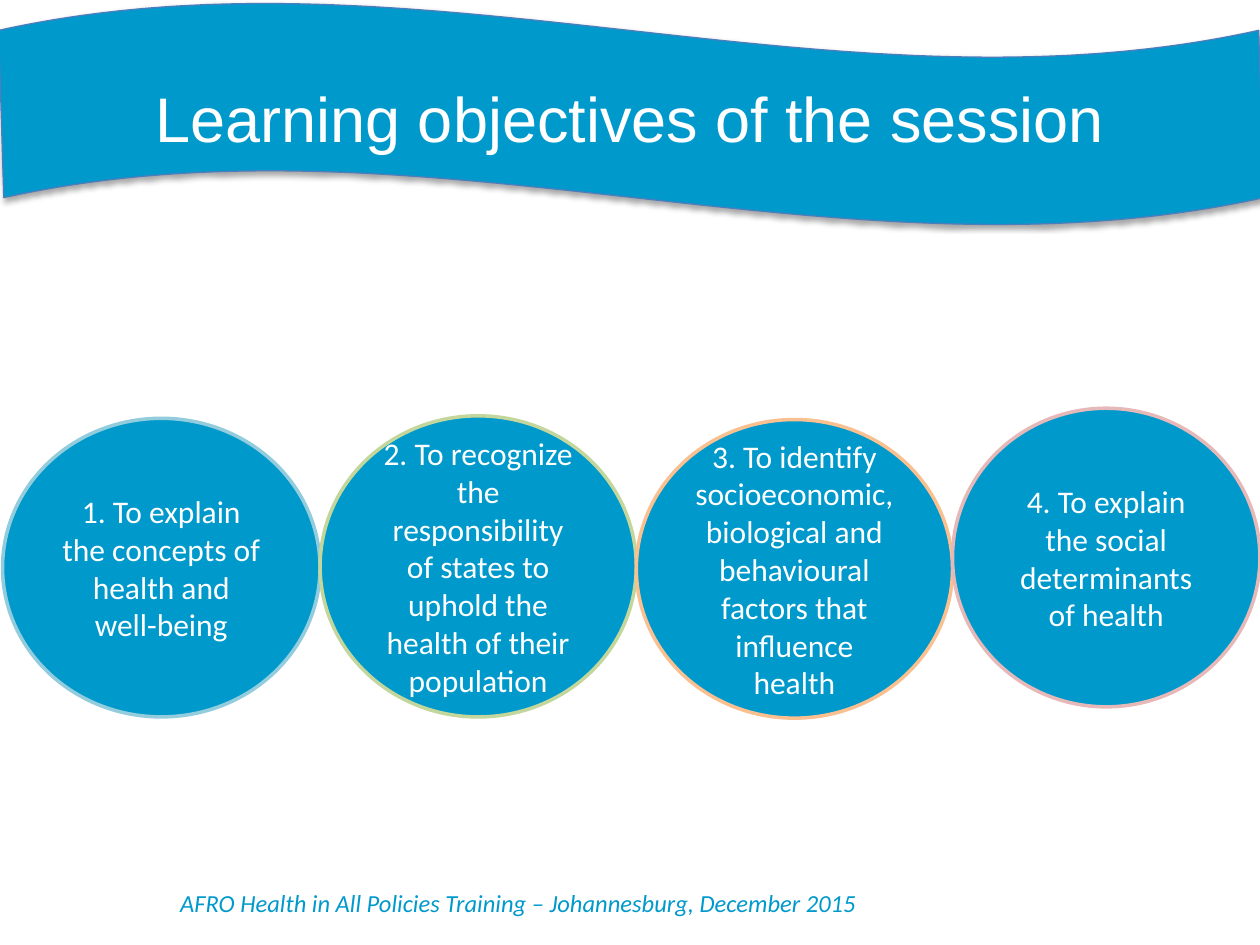
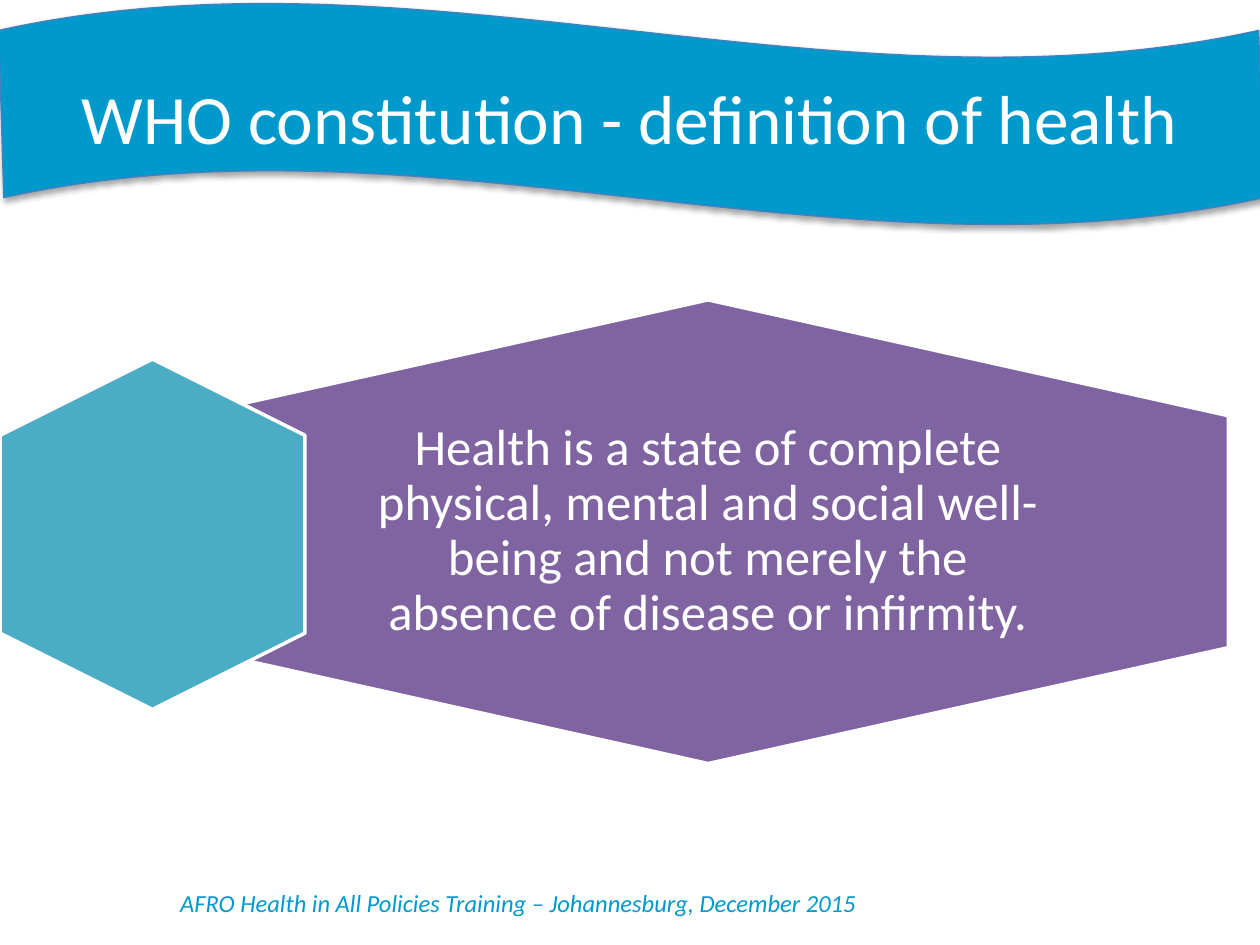
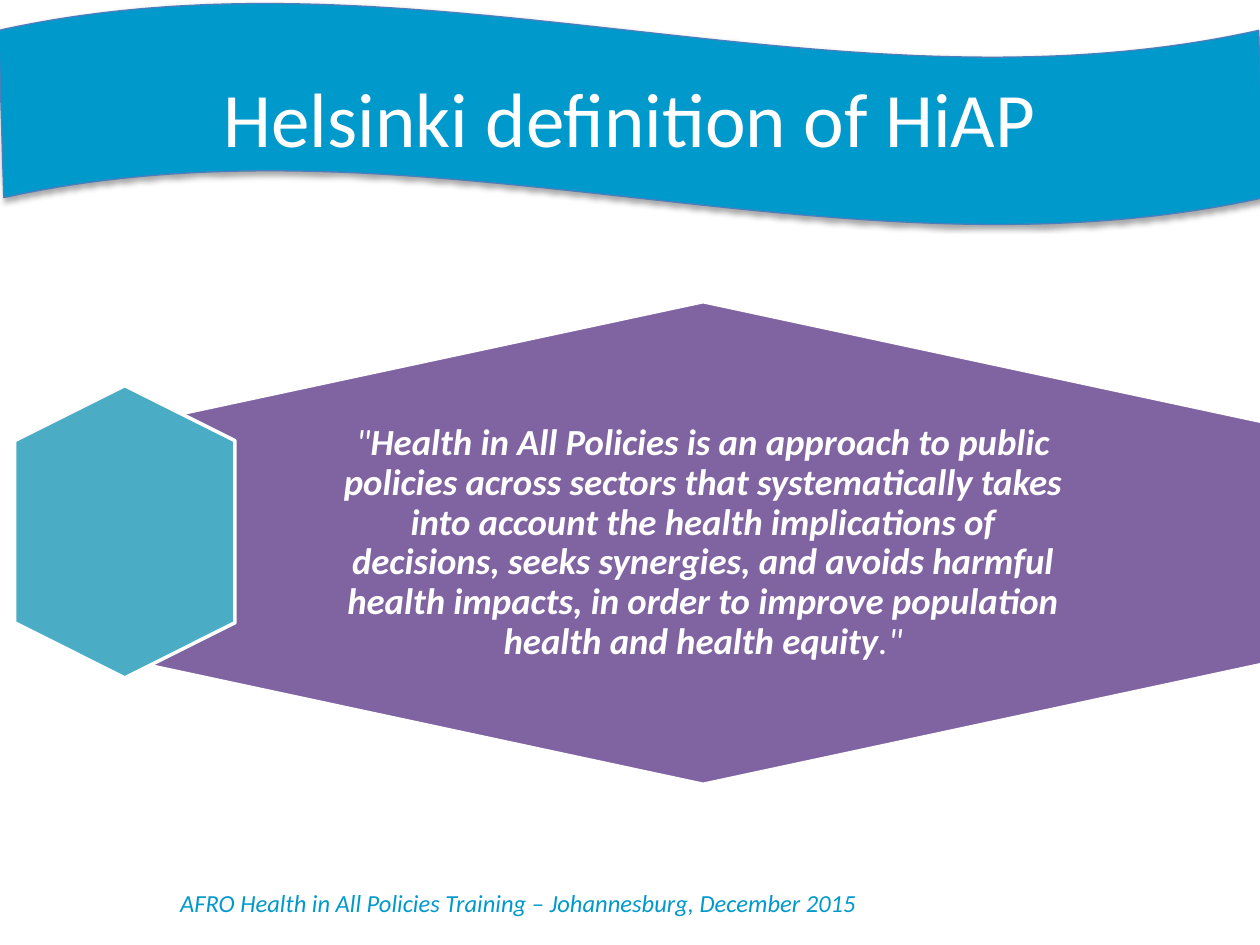
"""Builds three slides on health definitions under a shared wave banner."""
from dataclasses import dataclass

from lxml import etree
from pptx import Presentation
from pptx import util as u
from pptx.dml.color import RGBColor
from pptx.enum import shapes, text
from pptx.oxml.ns import qn


@dataclass(frozen=True)
class Theme:
    blue: str = "0099CC"
    edge: str = "4B7EBC"
    white: str = "FFFFFF"
    plum: str = "8064A2"
    teal: str = "4BACC6"
    black: str = "000000"
    rings: tuple = ("93CDDD", "C3D69B", "FAC090", "E6B9B8")
    body: str = "Calibri"
    head: str = "Arial"
    foot: float = 14
    note: float = 18
    quote: float = 21
    state: float = 29
    small: float = 36
    mid: float = 39.6
    large: float = 44


FOOTER = "AFRO Health in All Policies Training – Johannesburg, December 2015"
GOALS = (
    (3.32, 2.52, 2.37, "1. To explain the concepts of health and well-being"),
    (3.30, 2.51, 2.39, "2. To recognize the responsibility of states to uphold "
                       "the health of their population"),
    (3.33, 2.51, 2.37, "3. To identify socioeconomic, biological and behavioural "
                       "factors that influence health"),
    (3.24, 2.44, 2.37, "4. To explain the social determinants of health"),
)
STATE = ("Health is a state of complete physical, mental and social well-being "
         "and not merely the absence of disease or infirmity.")
POLICY = ("Health in All Policies is an approach to public policies across sectors "
          "that systematically takes into account the health implications of "
          "decisions, seeks synergies, and avoids harmful health impacts, in order "
          "to improve population health and health equity")


class Deck:
    def __init__(self, theme):
        self.theme = theme
        self.show = Presentation()
        self.show.slide_width = u.Inches(10)
        self.show.slide_height = u.Inches(7.5)
        self.slide = None

    def page(self):
        self.slide = self.show.slides.add_slide(self.show.slide_layouts[6])
        look = self.theme
        self.label((0.08, 7, 8.07, 0.34), [(FOOTER, False)], look.foot,
                   color=look.blue, slant=True)
        wave = self.shape(shapes.MSO_SHAPE.WAVE, (-0.01, 0.02, 10.04, 1.77),
                          look.blue, look.edge, 0.75)
        wave.adjustments[0] = 0.125
        wave.adjustments[1] = 0.002
        self.shade(wave)

    def shape(self, kind, box, fill, line, width=2):
        item = self.slide.shapes.add_shape(kind, *map(u.Inches, box))
        item.shadow.inherit = False
        item.fill.solid()
        item.fill.fore_color.rgb = RGBColor.from_string(fill)
        item.line.color.rgb = RGBColor.from_string(line)
        item.line.width = u.Pt(width)
        return item

    def shade(self, item):
        effects = item._element.spPr.find(qn("a:effectLst"))
        outer = etree.SubElement(effects, qn("a:outerShdw"), blurRad=str(u.Pt(3.1)),
                                 dist=str(u.Pt(1.8)), dir="5400000", rotWithShape="0")
        tint = etree.SubElement(outer, qn("a:srgbClr"), val=self.theme.black)
        etree.SubElement(tint, qn("a:alpha"), val="35000")

    def put(self, frame, runs, size, color=None, face=None, slant=False, pitch=None):
        frame.word_wrap = True
        para = frame.paragraphs[0]
        para.alignment = text.PP_ALIGN.CENTER
        if pitch:
            para.line_spacing = pitch
        for words, bold in runs:
            run = para.add_run()
            run.text = words
            font = run.font
            font.name = face or self.theme.body
            font.size = u.Pt(size)
            font.bold = bold
            font.italic = slant
            font.color.rgb = RGBColor.from_string(color or self.theme.white)

    def label(self, box, runs, size, middle=False, inset=None, **style):
        frame = self.slide.shapes.add_textbox(*map(u.Inches, box)).text_frame
        if middle:
            frame.vertical_anchor = text.MSO_ANCHOR.MIDDLE
        if inset:
            frame.margin_left = frame.margin_right = u.Inches(inset)
            frame.margin_top = frame.margin_bottom = u.Inches(inset)
        self.put(frame, runs, size, **style)

    def title(self, words, size):
        self.label((0.5, 0.3, 9, 1.25), [(words, False)], size, middle=True)

    def disc(self, box, ring, words):
        item = self.shape(shapes.MSO_SHAPE.OVAL, box, self.theme.blue, ring)
        item.text_frame.vertical_anchor = text.MSO_ANCHOR.MIDDLE
        self.put(item.text_frame, [(words, False)], self.theme.note)

    def hexa(self, mid, wide, high, fill):
        x, y = mid
        item = self.shape(shapes.MSO_SHAPE.HEXAGON,
                          (x - high / 2, y - wide / 2, high, wide),
                          fill, self.theme.white)
        item.rotation = 90

    def panel(self, mid, size, area, runs, points, inset, slant=False):
        self.hexa(mid, *size, self.theme.plum)
        x, y = mid
        wide, high = area
        self.label((x - wide / 2, y - high / 2, wide, high), runs, points,
                   middle=True, inset=inset, slant=slant, pitch=0.9)


def main():
    look = Theme()
    deck = Deck(look)

    deck.page()
    deck.label((0, 0.58, 10, 0.71), [("Learning objectives of the session", False)],
               look.small, face=look.head)
    left = 0.02
    for ring, (top, wide, high, words) in zip(look.rings, GOALS):
        deck.disc((left, top, wide, high), ring, words)
        left += wide

    deck.page()
    deck.title("WHO constitution - definition of health", look.mid)
    deck.panel((5.62, 4.22), (8.26, 3.68), (5.51, 2.46), [(STATE, False)],
               look.state, 0.12)
    deck.hexa((1.21, 4.24), 2.42, 2.78, look.teal)

    deck.page()
    deck.title("Helsinki definition of HiAP", look.large)
    deck.panel((5.58, 4.31), (8.93, 3.83), (5.95, 2.56),
               [('"', False), (POLICY, True), ('."', False)],
               look.quote, 0.09, slant=True)
    deck.hexa((0.99, 4.22), 1.75, 2.32, look.teal)

    deck.show.save("out.pptx")


if __name__ == "__main__":
    main()
